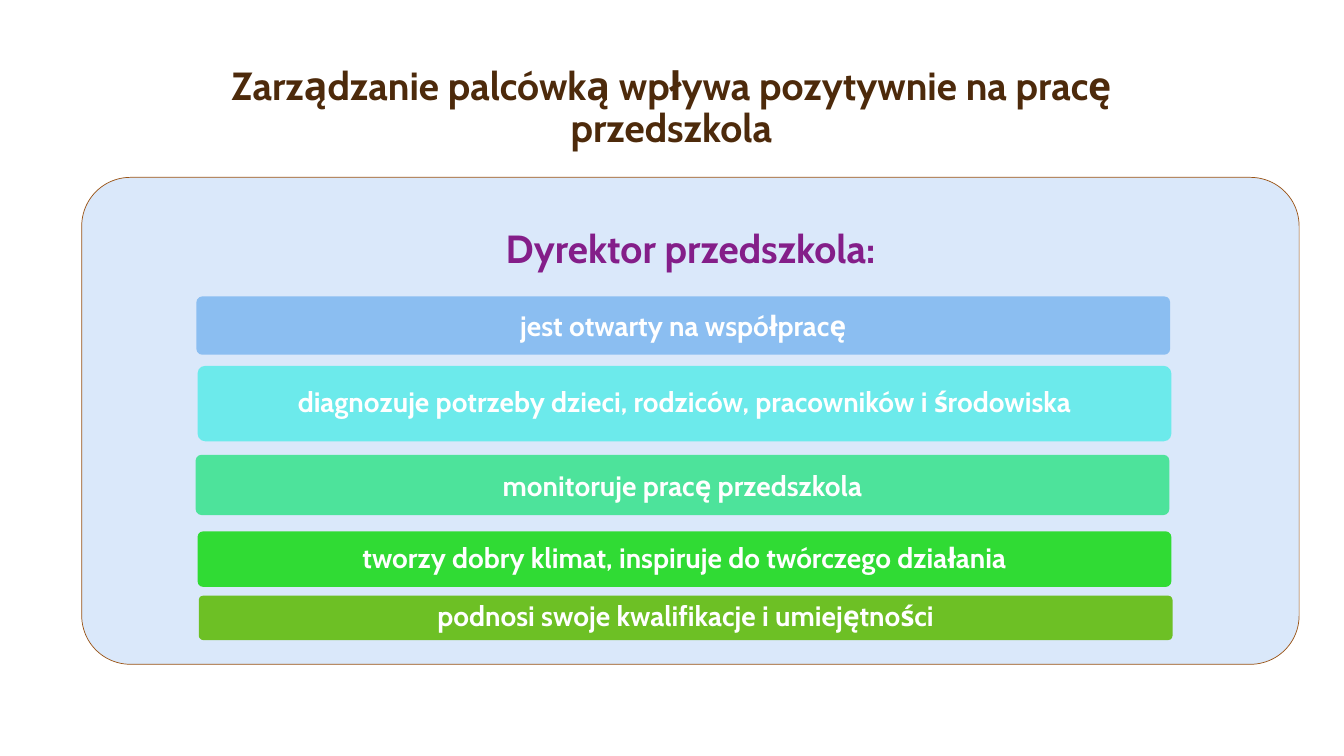
from pptx import Presentation
from pptx.dml.color import RGBColor
from pptx.enum.shapes import MSO_SHAPE as Preset
from pptx.enum.text import MSO_ANCHOR as Anchor, PP_ALIGN as Align
from pptx.util import Cm, Pt

BROWN = RGBColor(0x4D, 0x2A, 0x0B)
RUST = RGBColor(0x9A, 0x53, 0x15)
PURPLE = RGBColor(0x84, 0x1E, 0x89)
WHITE = RGBColor(0xFF, 0xFF, 0xFF)
PALE_BLUE = RGBColor(0xDA, 0xE8, 0xFA)
SKY = RGBColor(0x8B, 0xBE, 0xF1)
AQUA = RGBColor(0x6C, 0xEA, 0xEB)
MINT = RGBColor(0x4D, 0xE3, 0x9B)
GREEN = RGBColor(0x30, 0xDB, 0x34)
OLIVE = RGBColor(0x6D, 0xC0, 0x25)


def write(frame, text, size=20, color=WHITE, anchor=Anchor.MIDDLE,
          spacing=0.9, inset=(0.15, 0.1), font="Cabin"):
    frame.word_wrap = True
    frame.vertical_anchor = anchor
    frame.margin_left = frame.margin_right = Cm(inset[0])
    frame.margin_top = frame.margin_bottom = Cm(inset[1])
    paragraph = frame.paragraphs[0]
    paragraph.alignment = Align.CENTER
    paragraph.line_spacing = spacing
    run = paragraph.add_run()
    run.text = text
    run.font.name = font
    run.font.size = Pt(size)
    run.font.bold = True
    run.font.color.rgb = color


class DirectorSlide:
    heading_size = 28
    corner = 0.1

    def __init__(self, deck):
        self.slide = deck.slides.add_slide(deck.slide_layouts[6])

    def heading(self, text, box, **style):
        frame = self.slide.shapes.add_textbox(*map(Cm, box)).text_frame
        write(frame, text, size=self.heading_size, **style)

    def panel(self, box, fill, outline=None):
        panel = self.slide.shapes.add_shape(Preset.ROUNDED_RECTANGLE, *map(Cm, box))
        panel.shadow.inherit = False
        panel.adjustments[0] = self.corner
        panel.fill.solid()
        panel.fill.fore_color.rgb = fill
        if outline is None:
            panel.line.fill.background()
        else:
            panel.line.color.rgb = outline
            panel.line.width = Pt(0.5)
        return panel

    def duty(self, text, box, fill, spacing):
        write(self.panel(box, fill).text_frame, text, spacing=spacing)


def main():
    deck = Presentation()
    deck.slide_width, deck.slide_height = Cm(33.87), Cm(19.05)
    director = DirectorSlide(deck)

    director.heading("Zarządzanie palcówką wpływa pozytywnie na pracę przedszkola",
                     (2.95, 0.56, 27.94, 3.38), color=BROWN,
                     anchor=Anchor.BOTTOM, inset=(0.25, 0.13))
    left, top, width = 2.06, 4.47, 30.68
    director.panel((left, top, width, 12.27), PALE_BLUE, RUST)
    director.heading("Dyrektor przedszkola:", (left, top, width, 3.68),
                     color=PURPLE, inset=(0.3, 0.3))

    duties = [
        ("jest otwarty na współpracę", 4.95, 7.47, 1.47, SKY, 1.0),
        ("diagnozuje potrzeby dzieci, rodziców, pracowników i środowiska",
         4.98, 9.22, 1.9, AQUA, 0.9),
        ("monitoruje pracę przedszkola", 4.93, 11.46, 1.52, MINT, 1.0),
        ("tworzy dobry klimat, inspiruje do twórczego działania",
         4.98, 13.39, 1.4, GREEN, 0.9),
        ("podnosi swoje kwalifikacje i umiejętności", 5.01, 15.01, 1.12, OLIVE, 0.9),
    ]
    for text, duty_left, duty_top, height, fill, spacing in duties:
        director.duty(text, (duty_left, duty_top, 24.54, height), fill, spacing)

    deck.save("out.pptx")


if __name__ == "__main__":
    main()
